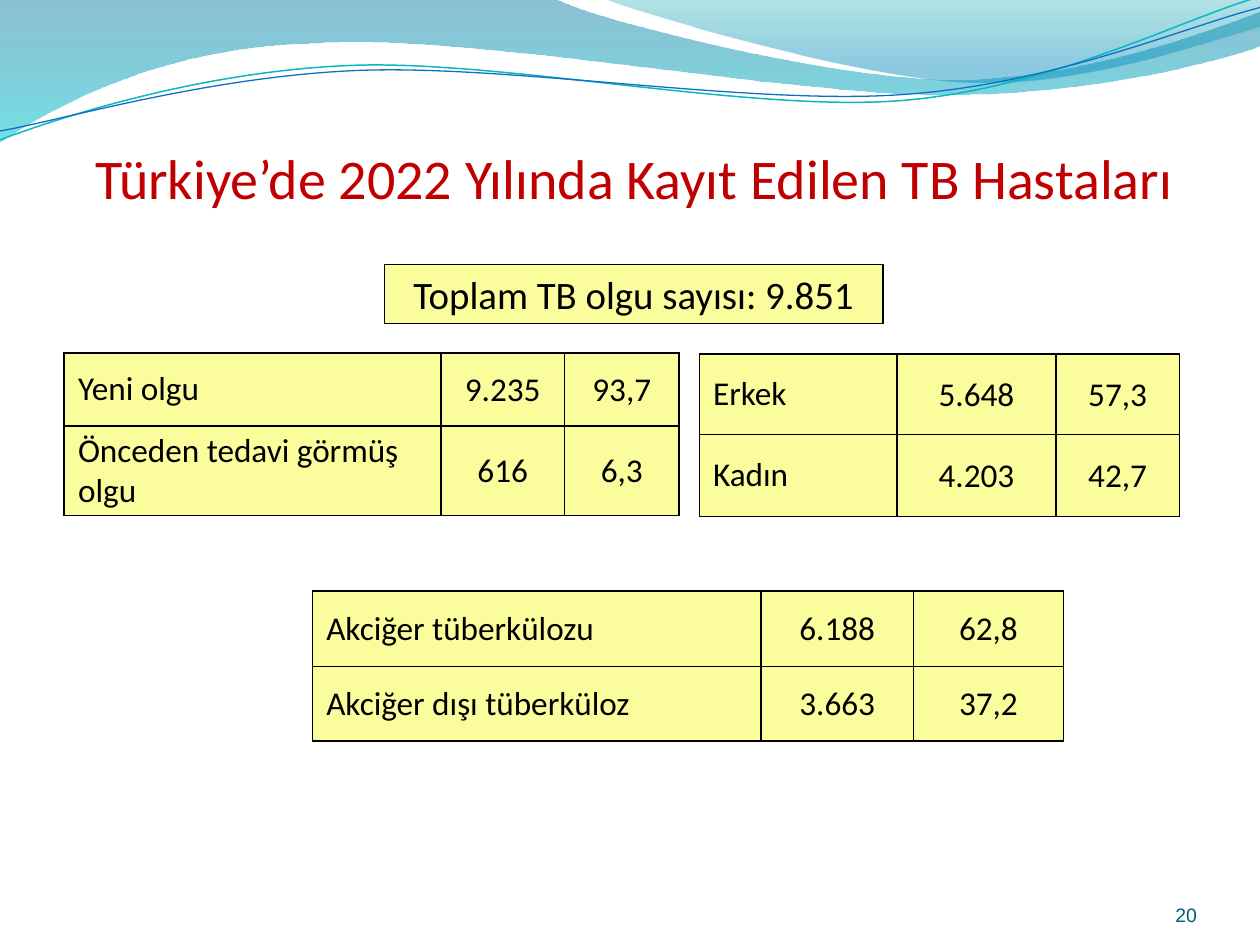
import math

from lxml import etree
from pptx import Presentation, util as u
from pptx.dml.color import RGBColor
from pptx.enum import shapes, text
from pptx.oxml.ns import qn

FONT = "Calibri"
YELLOW, BLACK = "FBFD9D", "000000"
TILT = 2.7

WAVES = [
    ([(0, 0), (4.4, -0.01),
      [(4.76, 0.17), (6.64, 0.63), (7.58, 0.63)],
      [(8.53, 0.63), (9.58, 0.26), (10, 0.09)],
      (10.01, 0.36),
      [(9.83, 0.44), (8.7, 0.76), (7.46, 0.75)],
      [(6.22, 0.75), (3.82, 0.28), (2.57, 0.34)],
      [(1.29, 0.36), (0.46, 0.83), (-0.01, 1.13)]],
     [(0, "0074A1", 45), (1, "00C6CF", 55)]),
    ([(4.79, -0.01),
      [(5.09, 0.11), (6.82, 0.62), (7.69, 0.65)],
      [(8.56, 0.69), (9.61, 0.32), (10, 0.21)],
      (10, 0)],
     [(0, "00A1A9", 30), (0.8, "008BBF", 45)]),
]
STRANDS = [
    ([(0, 1.11),
      [(0.48, 0.93), (1.58, 0.57), (2.77, 0.52)],
      [(3.95, 0.47), (5.93, 0.89), (7.13, 0.8)],
      [(8.33, 0.71), (9.38, 0.15), (9.98, -0.02)]],
     (4.99, 0.58), "0AB8BF", 0.85),
    ([(0, 1.04),
      [(0.47, 0.96), (1.64, 0.61), (2.83, 0.56)],
      [(4.03, 0.51), (5.97, 0.84), (7.17, 0.75)],
      [(8.36, 0.67), (9.41, 0.21), (10, 0.06)]],
     (5, 0.59), "0F6FC6", 0.75),
]
TABLES = [
    ((0.51, 2.8), (2.99, 0.98, 0.91), (0.58, 0.71),
     [("Yeni olgu", "9.235", "93,7"),
      ("Önceden tedavi görmüş olgu", "616", "6,3")]),
    ((5.55, 2.81), (1.57, 1.26, 0.98), (0.64, 0.65),
     [("Erkek", "5.648", "57,3"), ("Kadın", "4.203", "42,7")]),
    ((2.48, 4.69), (3.56, 1.21, 1.19), (0.6, 0.59),
     [("Akciğer tüberkülozu", "6.188", "62,8"),
      ("Akciğer dışı tüberküloz", "3.663", "37,2")]),
]


def color(value):
    return RGBColor.from_string(value)


def inches(*values):
    return [u.Inches(value) for value in values]


def add_outline(slide, outline, close):
    parts = [part if isinstance(part, list) else [part] for part in outline]
    anchors = [inches(*part[-1]) for part in parts]
    builder = slide.shapes.build_freeform(*anchors[0])
    builder.add_line_segments(anchors[1:], close=close)
    ribbon = builder.convert_to_shape()
    ribbon.shadow.inherit = False
    segments = list(ribbon._element.iter(qn("a:lnTo")))
    for segment, part in zip(segments, parts[1:]):
        if len(part) == 3:
            bend(segment, part, ribbon.left, ribbon.top)
    return ribbon


def bend(segment, controls, left, top):
    curve = etree.Element(qn("a:cubicBezTo"))
    for x, y in controls:
        etree.SubElement(curve, qn("a:pt"), x=str(u.Inches(x) - left),
                         y=str(u.Inches(y) - top))
    segment.getparent().replace(segment, curve)


def add_wave(slide, outline, stops):
    wave = add_outline(slide, outline, True)
    wave.line.fill.background()
    wave.fill.gradient()
    wave.fill.gradient_angle = 270
    for stop, (position, shade, _) in zip(wave.fill.gradient_stops, stops):
        stop.position = position
        stop.color.rgb = color(shade)
    for tint, (_, _, alpha) in zip(wave._element.spPr.iter(qn("a:srgbClr")), stops):
        etree.SubElement(tint, qn("a:alpha"), val=str(alpha * 1000))


def turn(point, center):
    angle = math.radians(TILT)
    dx, dy = point[0] - center[0], point[1] - center[1]
    return (center[0] + dx * math.cos(angle) - dy * math.sin(angle),
            center[1] + dx * math.sin(angle) + dy * math.cos(angle))


def add_strand(slide, outline, center, shade, width):
    level = [[turn(point, center) for point in part] if isinstance(part, list)
             else turn(part, center) for part in outline]
    strand = add_outline(slide, level, False)
    strand.rotation = 360 - TILT
    strand.fill.background()
    strand.line.color.rgb = color(shade)
    strand.line.width = u.Pt(width)


def write(frame, words, size, shade=BLACK, align=text.PP_ALIGN.CENTER, font=FONT):
    frame.text = words
    frame.word_wrap = True
    paragraph = frame.paragraphs[0]
    paragraph.alignment = align
    run_font = paragraph.runs[0].font
    run_font.name, run_font.size = font, u.Pt(size)
    run_font.color.rgb = color(shade)
    return paragraph


def set_margins(box, left, top, right, bottom):
    box.margin_left, box.margin_top, box.margin_right, box.margin_bottom = inches(
        left, top, right, bottom)


def add_title(slide, words):
    title = slide.shapes.title
    title.left, title.top, title.width, title.height = inches(0.31, 1.09, 9.45, 0.64)
    write(title.text_frame, words, 32, "C00000").space_before = u.Pt(0)
    title.text_frame.auto_size = text.MSO_AUTO_SIZE.SHAPE_TO_FIT_TEXT
    title.text_frame.vertical_anchor = text.MSO_ANCHOR.TOP
    slide.shapes._spTree.append(title._element)


def add_page_number(slide, number):
    frame = slide.shapes.add_textbox(*inches(8.67, 6.95, 0.83, 0.4)).text_frame
    write(frame, number, 11.1, "045D75", text.PP_ALIGN.RIGHT, "Arial")
    set_margins(frame, 0, 0, 0, 0)
    frame.vertical_anchor = text.MSO_ANCHOR.BOTTOM


def add_total(slide, words):
    total = slide.shapes.add_shape(shapes.MSO_SHAPE.RECTANGLE,
                                   *inches(3.05, 2.1, 3.96, 0.47))
    total.shadow.inherit = False
    total.fill.solid()
    total.fill.fore_color.rgb = color(YELLOW)
    total.line.color.rgb = color(BLACK)
    total.line.width = u.Pt(0.75)
    total.text_frame.vertical_anchor = text.MSO_ANCHOR.TOP
    write(total.text_frame, words, 22.2).space_before = u.Pt(4.4)


def add_borders(cell):
    properties = cell._tc.get_or_add_tcPr()
    for side in "LRTB":
        border = etree.SubElement(properties, qn(f"a:ln{side}"), w=str(u.Pt(1)))
        fill = etree.SubElement(border, qn("a:solidFill"))
        etree.SubElement(fill, qn("a:srgbClr"), val=BLACK)


def format_cell(cell, words, is_label):
    align = text.PP_ALIGN.LEFT if is_label else text.PP_ALIGN.CENTER
    write(cell.text_frame, words, 19, align=align)
    set_margins(cell, *((0.11, 0.04, 0.11, 0.04) if is_label else (0.01, 0.01, 0.01, 0)))
    cell.vertical_anchor = text.MSO_ANCHOR.MIDDLE
    add_borders(cell)
    cell.fill.solid()
    cell.fill.fore_color.rgb = color(YELLOW)


def add_case_table(slide, corner, widths, heights, rows):
    table = slide.shapes.add_table(len(rows), len(widths), *inches(
        *corner, sum(widths), sum(heights))).table
    table.first_row = table.horz_banding = False
    for column, width in zip(table.columns, widths):
        column.width = u.Inches(width)
    for row, height, values in zip(table.rows, heights, rows):
        row.height = u.Inches(height)
        for index, words in enumerate(values):
            format_cell(row.cells[index], words, index == 0)


def main():
    deck = Presentation()
    deck.slide_width, deck.slide_height = inches(10, 7.5)
    slide = deck.slides.add_slide(deck.slide_layouts[5])
    for wave in WAVES:
        add_wave(slide, *wave)
    for strand in STRANDS:
        add_strand(slide, *strand)
    add_title(slide, "Türkiye’de 2022 Yılında Kayıt Edilen TB Hastaları")
    add_page_number(slide, "20")
    add_total(slide, "Toplam TB olgu sayısı: 9.851")
    for case_table in TABLES:
        add_case_table(slide, *case_table)
    deck.save("out.pptx")


if __name__ == "__main__":
    main()
